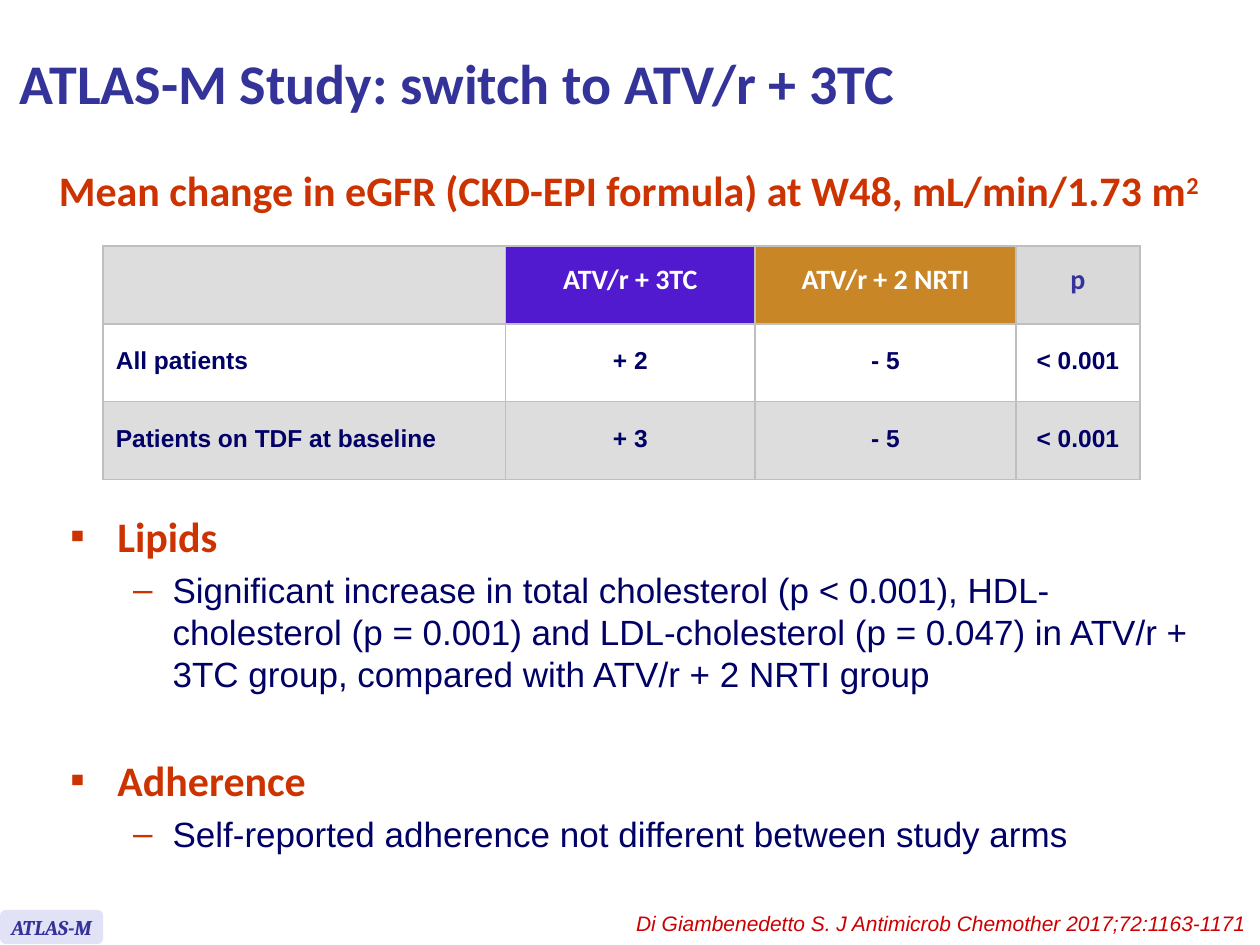
from lxml import etree
from pptx import Presentation
from pptx.dml.color import RGBColor
from pptx.enum import shapes, text
from pptx.oxml import ns
from pptx.util import Pt

BLUE = RGBColor(0x33, 0x33, 0x99)
NAVY = RGBColor(0x00, 0x00, 0x66)
ORANGE = RGBColor(0xCC, 0x33, 0x00)
RED = RGBColor(0xCC, 0x00, 0x00)
WHITE = RGBColor(0xFF, 0xFF, 0xFF)
GREY = RGBColor(0xDD, 0xDD, 0xDD)
P_GREY = RGBColor(0xD9, 0xD9, 0xD9)
BORDER = RGBColor(0xBF, 0xBF, 0xBF)
LILAC = RGBColor(0xE2, 0xE2, 0xF6)
VIOLET = RGBColor(0x51, 0x1A, 0xCF)
OCHRE = RGBColor(0xC9, 0x86, 0x27)

LEFT, CENTER, RIGHT = text.PP_ALIGN.LEFT, text.PP_ALIGN.CENTER, text.PP_ALIGN.RIGHT
MIDDLE = text.MSO_ANCHOR.MIDDLE


def add_run(p, words, color, **font):
    r = p.add_run()
    r.text = words
    r.font.color.rgb = color
    for key, value in font.items():
        setattr(r.font, key, value)
    return r


def add_sub(parent, tag, **attrs):
    return etree.SubElement(parent, ns.qn(tag), attrs)


prs = Presentation()
prs.slide_width, prs.slide_height = Pt(720), Pt(540)
s = prs.slides.add_slide(prs.slide_layouts[6])

# Title, table heading and citation
heading = dict(name="Calibri", bold=True)
lines = [
    ("ATLAS-M Study: switch to ATV/r + 3TC", (4.3, 3.6, 645, 87), LEFT, BLUE,
     dict(heading, size=Pt(32))),
    ("Mean change in eGFR (CKD-EPI formula) at W48, mL/min/1.73 m", (23.8, 90.7, 671, 36),
     CENTER, ORANGE, dict(heading, size=Pt(24))),
    ("Di Giambenedetto S. J Antimicrob Chemother 2017;72:1163-1171", (316, 517, 403.2, 21.6),
     RIGHT, RED, dict(name="Arial", size=Pt(12), italic=True)),
]
for words, box, align, color, font in lines:
    tf = s.shapes.add_textbox(*map(Pt, box)).text_frame
    tf.word_wrap = True
    p = tf.paragraphs[0]
    p.alignment = align
    add_run(p, words, color, **font)
    if words.startswith("ATLAS"):
        tf.vertical_anchor = MIDDLE
    if words.endswith(" m"):
        squared = add_run(p, "2", color, **font)
        squared.font._element.set("baseline", "30000")

# Results table
rows = [
    ("", "ATV/r + 3TC", "ATV/r + 2 NRTI", "p"),
    ("All patients", "+ 2", "- 5", "< 0.001"),
    ("Patients on TDF at baseline", "+ 3", "- 5", "< 0.001"),
]
fills = [(GREY, VIOLET, OCHRE, P_GREY), (WHITE,) * 4, (GREY,) * 4]
widths = (230, 142.5, 149, 71)
row_height = 44.5
table = s.shapes.add_table(3, 4, Pt(59), Pt(140.6), Pt(sum(widths)), Pt(3 * row_height)).table
for column, width in zip(table.columns, widths):
    column.width = Pt(width)
for i, row in enumerate(rows):
    table.rows[i].height = Pt(row_height)
    for j, words in enumerate(row):
        cell = table.cell(i, j)
        cell.vertical_anchor = MIDDLE
        for side in "LRTB":
            ln = add_sub(cell._tc.get_or_add_tcPr(), f"a:ln{side}", w=str(Pt(1)))
            add_sub(add_sub(ln, "a:solidFill"), "a:srgbClr", val=str(BORDER))
        cell.fill.solid()
        cell.fill.fore_color.rgb = fills[i][j]
        p = cell.text_frame.paragraphs[0]
        p.alignment = CENTER if j else LEFT
        p.line_spacing = Pt(14.2)
        if i == 0 and words:
            add_run(p, words, BLUE if j == 3 else WHITE, size=Pt(16), **heading)
        elif words:
            add_run(p, words, NAVY, name="Arial", size=Pt(14), bold=True)

# Study tag
sp = s.shapes.add_shape(shapes.MSO_SHAPE.ROUNDED_RECTANGLE, Pt(0), Pt(520), Pt(59), Pt(19.5))
sp.shadow.inherit = False
sp.fill.solid()
sp.fill.fore_color.rgb = LILAC
sp.line.fill.background()
tf = sp.text_frame
tf.word_wrap = False
tf.vertical_anchor = MIDDLE
p = tf.paragraphs[0]
p.alignment = CENTER
add_run(p, "ATLAS-M", BLUE, name="Cambria", size=Pt(12), bold=True, italic=True)

# Findings: level, space before, words
findings = [
    (0, 0, "Lipids"),
    (1, 4.6, "Significant increase in total cholesterol (p < 0.001), HDL-cholesterol (p = 0.001) "
             "and LDL-cholesterol (p = 0.047) in ATV/r + 3TC group, compared with "
             "ATV/r + 2 NRTI group"),
    (0, 34, "Adherence"),
    (1, 4.6, "Self-reported adherence not different between study arms"),
]
levels = [
    dict(bullet="▪", margin=27, hang=27, color=ORANGE, font=dict(heading, size=Pt(24))),
    dict(bullet="–", margin=58.5, hang=22.5, color=NAVY,
         font=dict(name="Arial", size=Pt(20), bold=False)),
]
tf = s.shapes.add_textbox(Pt(33), Pt(288), Pt(671), Pt(206)).text_frame
tf.word_wrap = True
for i, (level, space, words) in enumerate(findings):
    style = levels[level]
    p = tf.add_paragraph() if i else tf.paragraphs[0]
    p.level = level
    p.space_before = Pt(space)
    pPr = p._p.get_or_add_pPr()
    pPr.set("marL", str(Pt(style["margin"])))
    pPr.set("indent", str(-Pt(style["hang"])))
    add_sub(add_sub(pPr, "a:buClr"), "a:srgbClr", val=str(ORANGE))
    add_sub(pPr, "a:buFont", typeface="Arial")
    add_sub(pPr, "a:buChar", char=style["bullet"])
    add_run(p, words, style["color"], **style["font"])

prs.save("out.pptx")
